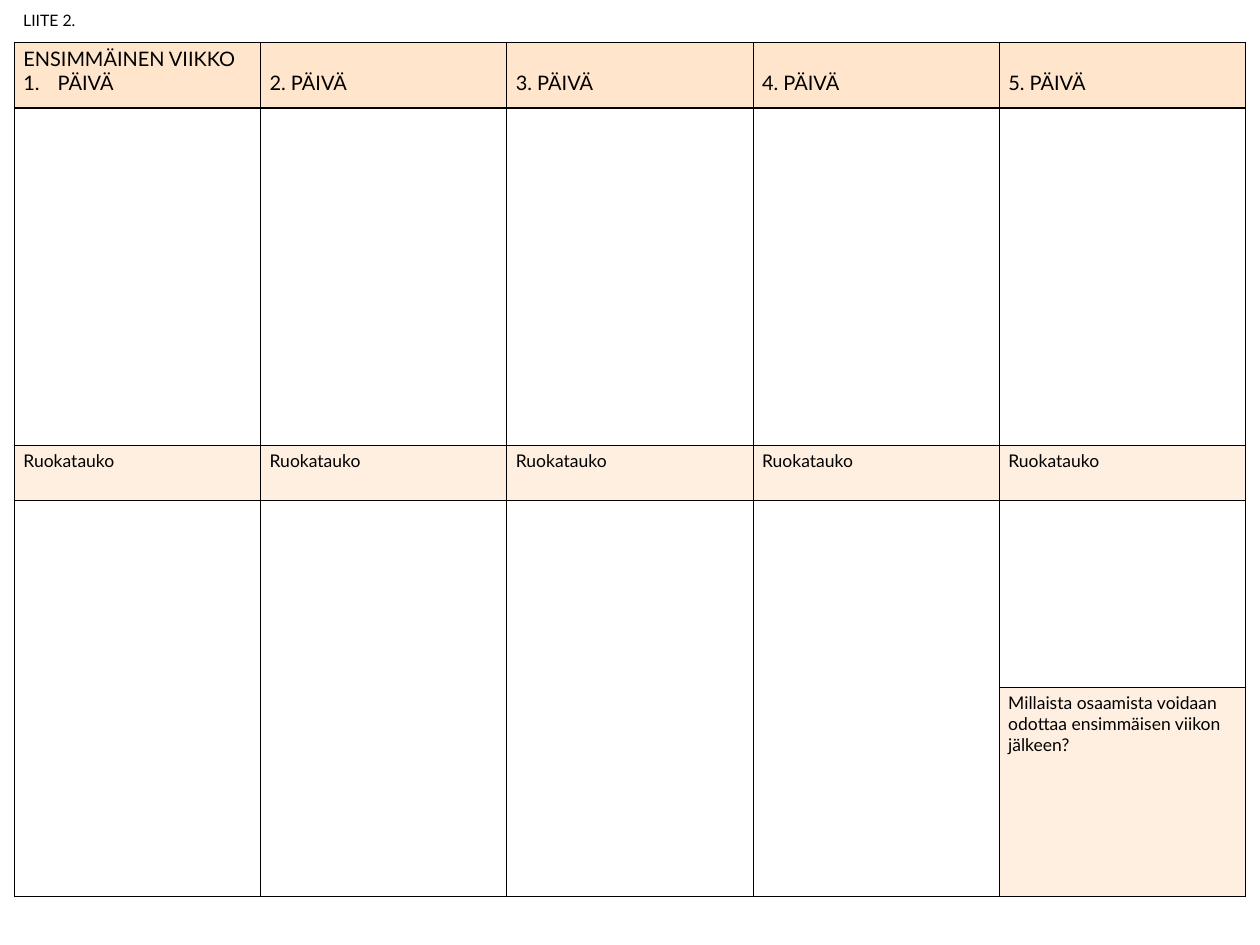
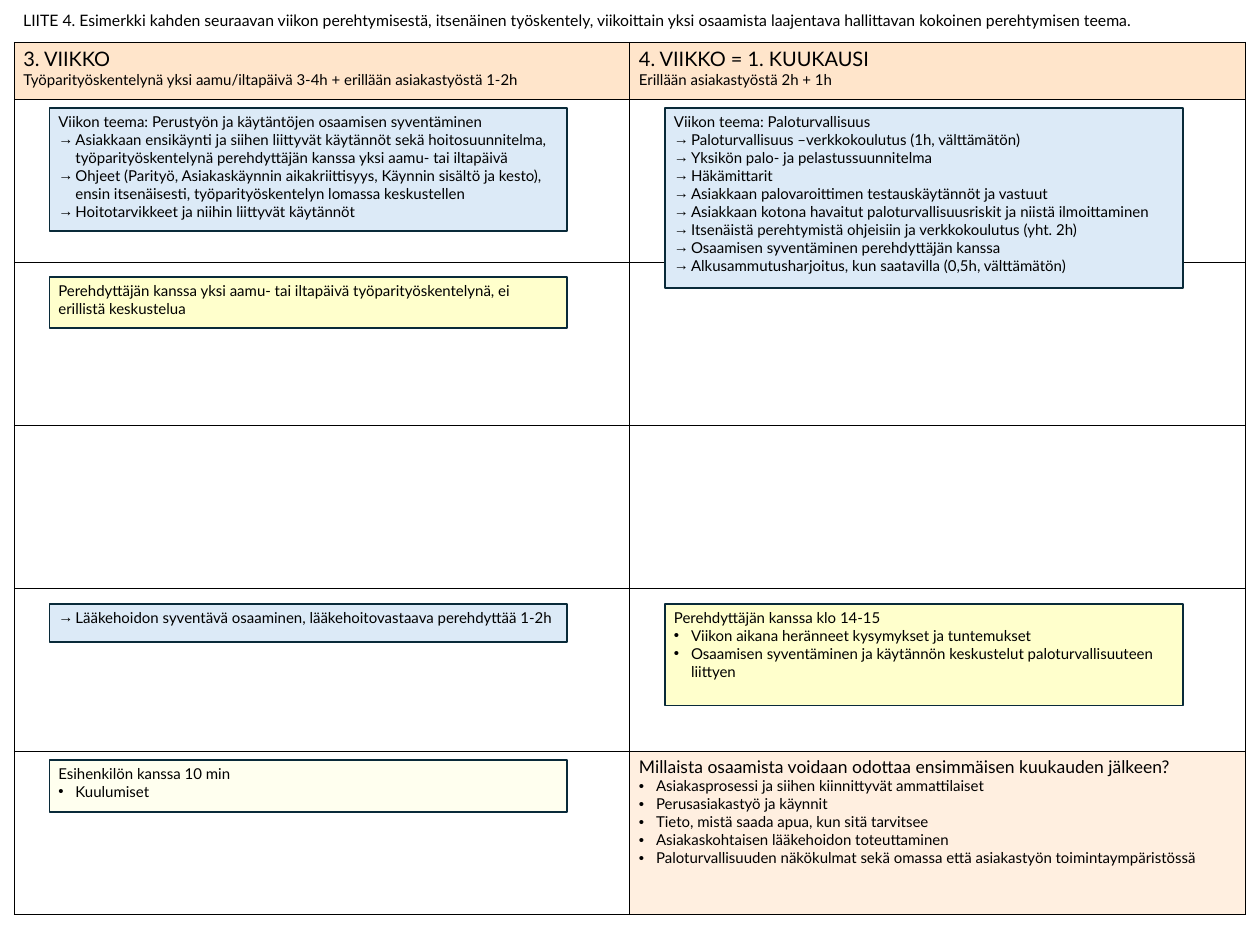
"""Build two induction planning sheets: the first week by day, and weeks three and four."""
from lxml import etree
from pptx import Presentation
from pptx.dml.color import RGBColor
from pptx.enum.shapes import MSO_SHAPE
from pptx.enum.text import MSO_ANCHOR, PP_ALIGN
from pptx.oxml.ns import qn
from pptx.util import Inches, Pt

RECTANGLE = MSO_SHAPE.RECTANGLE
TOP, MIDDLE = MSO_ANCHOR.TOP, MSO_ANCHOR.MIDDLE
LEFT = PP_ALIGN.LEFT

COLORS = {"ink": "000000", "peach": "FFCC99", "blue": "DCEAF7",
          "yellow": "FFFFCC", "outline": "092A39"}
FONT = "Lato"
WIDTH, HEIGHT = 14, 10.5
MARGIN, TITLE_HEIGHT = 0.16, 0.47
CONTENT_WIDTH = WIDTH - 2 * MARGIN
HEADER_SHARE, SOFT_SHARE = 50, 30
MARKERS = {"→": 0.19, "•": 0.19, "#": 0.38}


def write(frame, lines, size=12, lead=None, anchor=TOP, spacing=None):
    """Fill a frame; lead sizes the first line, and a leading marker makes a list item."""
    frame.word_wrap = True
    frame.vertical_anchor = anchor
    for index, line in enumerate(lines):
        paragraph = frame.paragraphs[0] if index == 0 else frame.add_paragraph()
        paragraph.alignment = LEFT
        if spacing:
            paragraph.line_spacing = spacing
        marker = line[0] if line[0] in MARKERS else None
        run = paragraph.add_run()
        run.text = line[1:].strip() if marker else line
        run.font.name = FONT
        run.font.size = Pt(lead if lead and index == 0 else size)
        run.font.color.rgb = RGBColor.from_string(COLORS["ink"])
        if marker:
            properties = paragraph._p.get_or_add_pPr()
            properties.set("marL", str(Inches(MARKERS[marker])))
            properties.set("indent", str(-Inches(MARKERS[marker])))
            if marker == "#":
                etree.SubElement(properties, qn("a:buAutoNum"), type="arabicPeriod")
            else:
                etree.SubElement(properties, qn("a:buFont"), typeface="Arial")
                etree.SubElement(properties, qn("a:buChar"), char=marker)


def paint(fill, holder, color, opacity=100):
    """Give a solid fill, see-through when the opacity is below 100 percent."""
    fill.solid()
    fill.fore_color.rgb = RGBColor.from_string(COLORS[color])
    if opacity < 100:
        tint = holder.find(qn("a:solidFill")).find(qn("a:srgbClr"))
        etree.SubElement(tint, qn("a:alpha"), val=str(opacity * 1000))


DAYS = 5
DAY_ROWS = [0.73, 3.75, 0.61, 4.4]
DAY_WIDTH = CONTENT_WIDTH / DAYS
GOAL_HEIGHT = 2.32
WEEKS = 2
WEEK_ROWS = [0.64] + [1.81] * 5
WEEK_WIDTH = CONTENT_WIDTH / WEEKS
NOTE_INDENT, NOTE_WIDTH = 0.39, 5.75

first_week = {(0, 0): (["ENSIMMÄINEN VIIKKO", "# PÄIVÄ"], 16, 16, HEADER_SHARE)}
for day in range(DAYS):
    if day:
        first_week[0, day] = ([f"{day + 1}. PÄIVÄ"], 16, 16, HEADER_SHARE)
    first_week[2, day] = (["Ruokatauko"], 14, 14, SOFT_SHARE)

next_weeks = {
    (0, 0): (["3. VIIKKO",
              "Työparityöskentelynä yksi aamu/iltapäivä 3-4h + erillään asiakastyöstä 1-2h"],
             16, 12, HEADER_SHARE),
    (0, 1): (["4. VIIKKO = 1. KUUKAUSI", "Erillään asiakastyöstä 2h + 1h"],
             16, 12, HEADER_SHARE),
    (5, 1): (["Millaista osaamista voidaan odottaa ensimmäisen kuukauden jälkeen?",
              "• Asiakasprosessi ja siihen kiinnittyvät ammattilaiset",
              "• Perusasiakastyö ja käynnit",
              "• Tieto, mistä saada apua, kun sitä tarvitsee",
              "• Asiakaskohtaisen lääkehoidon toteuttaminen",
              "• Paloturvallisuuden näkökulmat sekä omassa että asiakastyön toimintaympäristössä"],
             14, 12, SOFT_SHARE),
}

goal = (MARGIN + (DAYS - 1) * DAY_WIDTH, TITLE_HEIGHT + sum(DAY_ROWS) - GOAL_HEIGHT,
        DAY_WIDTH, GOAL_HEIGHT, "peach", SOFT_SHARE, "ink", 1, 14,
        ["Millaista osaamista voidaan odottaa ensimmäisen viikon jälkeen?"])

week_notes = [
    (1, 1, 0.09, 2, "blue", 100,
     ["Viikon teema: Paloturvallisuus",
      "→ Paloturvallisuus –verkkokoulutus (1h, välttämätön)",
      "→ Yksikön palo- ja pelastussuunnitelma",
      "→ Häkämittarit",
      "→ Asiakkaan palovaroittimen testauskäytännöt ja vastuut",
      "→ Asiakkaan kotona havaitut paloturvallisuusriskit ja niistä ilmoittaminen",
      "→ Itsenäistä perehtymistä ohjeisiin ja verkkokoulutus (yht. 2h)",
      "→ Osaamisen syventäminen perehdyttäjän kanssa",
      "→ Alkusammutusharjoitus, kun saatavilla (0,5h, välttämätön)"]),
    (1, 4, 0.17, 1.13, "yellow", 100,
     ["Perehdyttäjän kanssa klo 14-15",
      "• Viikon aikana heränneet kysymykset ja tuntemukset",
      "• Osaamisen syventäminen ja käytännön keskustelut paloturvallisuuteen liittyen"]),
    (0, 1, 0.09, 1.37, "blue", 100,
     ["Viikon teema: Perustyön ja käytäntöjen osaamisen syventäminen",
      "→ Asiakkaan ensikäynti ja siihen liittyvät käytännöt sekä hoitosuunnitelma, "
      "työparityöskentelynä perehdyttäjän kanssa yksi aamu- tai iltapäivä",
      "→ Ohjeet (Parityö, Asiakaskäynnin aikakriittisyys, Käynnin sisältö ja kesto), "
      "ensin itsenäisesti, työparityöskentelyn lomassa keskustellen",
      "→ Hoitotarvikkeet ja niihin liittyvät käytännöt"]),
    (0, 2, 0.16, 0.57, "yellow", 100,
     ["Perehdyttäjän kanssa yksi aamu- tai iltapäivä työparityöskentelynä, "
      "ei erillistä keskustelua"]),
    (0, 4, 0.17, 0.42, "blue", 100,
     ["→ Lääkehoidon syventävä osaaminen, lääkehoitovastaava perehdyttää 1-2h"]),
    (0, 5, 0.09, 0.58, "yellow", SOFT_SHARE,
     ["Esihenkilön kanssa 10 min", "• Kuulumiset"]),
]
notes = [(MARGIN + week * WEEK_WIDTH + NOTE_INDENT,
          TITLE_HEIGHT + sum(WEEK_ROWS[:row]) + drop,
          NOTE_WIDTH, height, color, opacity, "outline", 1.5, 12, lines)
         for week, row, drop, height, color, opacity, lines in week_notes]

sheets = [
    ("LIITE 2.", DAYS, DAY_ROWS, first_week, [goal]),
    ("LIITE 4. Esimerkki kahden seuraavan viikon perehtymisestä, itsenäinen työskentely, "
     "viikoittain yksi osaamista laajentava hallittavan kokoinen perehtymisen teema.",
     WEEKS, WEEK_ROWS, next_weeks, notes),
]

deck = Presentation()
deck.slide_width, deck.slide_height = Inches(WIDTH), Inches(HEIGHT)
for title, columns, rows, entries, callouts in sheets:
    sheet = deck.slides.add_slide(deck.slide_layouts[6])
    heading = sheet.shapes.add_textbox(Inches(MARGIN), 0, Inches(CONTENT_WIDTH),
                                       Inches(TITLE_HEIGHT))
    write(heading.text_frame, [title], size=12.6, anchor=MIDDLE, spacing=0.9)

    schedule = sheet.shapes.add_table(
        len(rows), columns, Inches(MARGIN), Inches(TITLE_HEIGHT),
        Inches(CONTENT_WIDTH), Inches(sum(rows))).table
    schedule.first_row = schedule.horz_banding = False
    for column in schedule.columns:
        column.width = Inches(CONTENT_WIDTH / columns)
    for row, row_height in enumerate(rows):
        schedule.rows[row].height = Inches(row_height)
        for column in range(columns):
            slot = schedule.cell(row, column)
            borders = slot._tc.get_or_add_tcPr()
            for side in ("lnL", "lnR", "lnT", "lnB"):
                border = etree.SubElement(borders, qn(f"a:{side}"), w=str(Pt(1)))
                stroke = etree.SubElement(border, qn("a:solidFill"))
                etree.SubElement(stroke, qn("a:srgbClr"), val=COLORS["ink"])
            if (row, column) not in entries:
                slot.fill.background()
                continue
            lines, lead, size, opacity = entries[row, column]
            paint(slot.fill, borders, "peach", opacity)
            write(slot.text_frame, lines, size=size, lead=lead)
            if row == 0 and len(lines) == 1:
                slot.margin_top = Inches(0.32)

    for left, top, width, height, color, opacity, edge, weight, size, lines in callouts:
        callout = sheet.shapes.add_shape(RECTANGLE, Inches(left), Inches(top),
                                         Inches(width), Inches(height))
        callout.shadow.inherit = False
        paint(callout.fill, callout._element.spPr, color, opacity)
        callout.line.color.rgb = RGBColor.from_string(COLORS[edge])
        callout.line.width = Pt(weight)
        write(callout.text_frame, lines, size=size)

deck.save("out.pptx")
